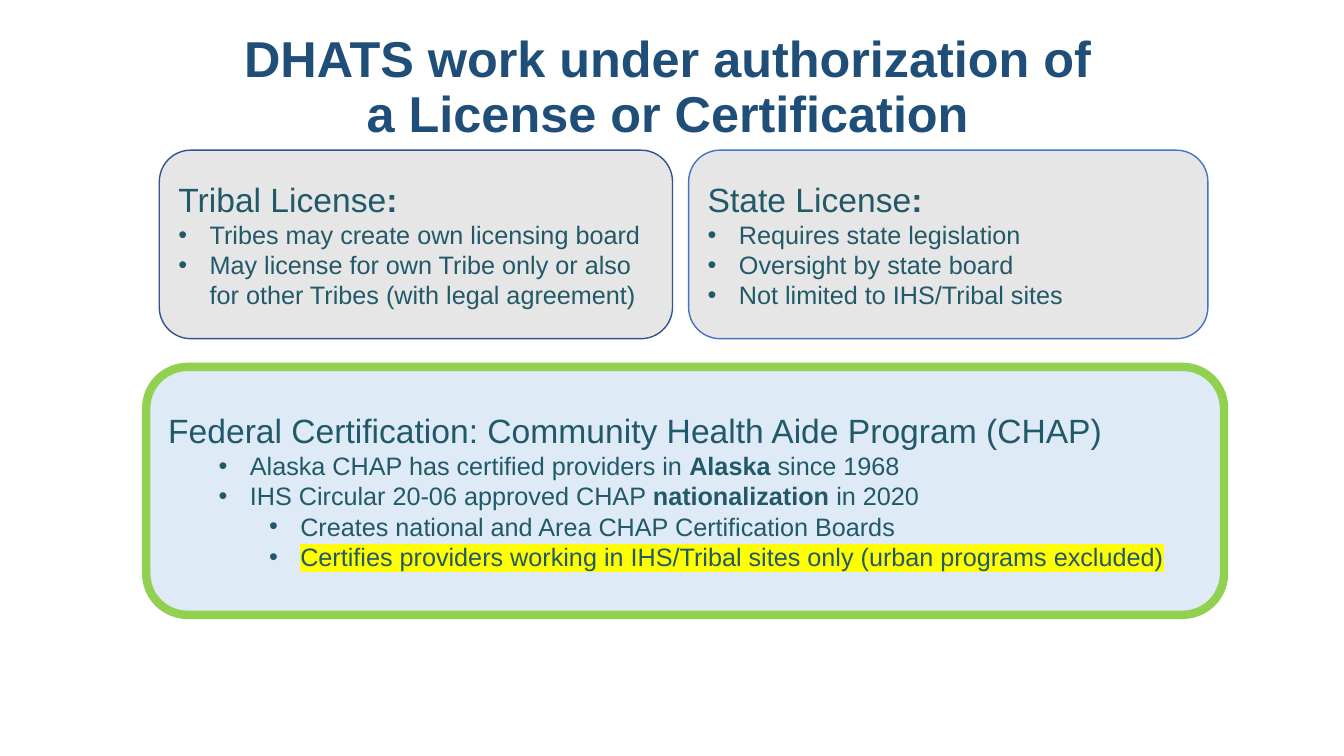
from dataclasses import dataclass

from lxml.etree import SubElement
from pptx import Presentation
from pptx.dml.color import RGBColor
from pptx.enum.shapes import MSO_SHAPE
from pptx.enum.text import MSO_ANCHOR, PP_ALIGN
from pptx.oxml.ns import qn
from pptx.util import Inches, Pt


@dataclass(frozen=True)
class Theme:
    font: str = "Arial"
    title: str = "1F4E79"
    body: str = "215968"
    license_fill: str = "E7E6E6"
    tribal_line: str = "325491"
    state_line: str = "4472C4"
    federal_fill: str = "DEEBF7"
    federal_line: str = "92D050"
    highlight: str = "FFFF00"
    title_size: int = 36
    heading_size: int = 24
    bullet_size: int = 18


THEME = Theme()
BULLET_INDENT = 0.31
LEVEL_STEP = 0.5


def style_run(run, size, color, bold=False):
    run.font.name = THEME.font
    run.font.size = Pt(size)
    run.font.bold = bold
    run.font.color.rgb = RGBColor.from_string(color)


def add_marked_text(paragraph, text, size):
    """Write text in which *asterisks* enclose the bold words."""
    for index, words in enumerate(text.split("*")):
        if words:
            run = paragraph.add_run()
            run.text = words
            style_run(run, size, THEME.body, bold=index % 2 == 1)


def add_bullet(paragraph, level):
    paragraph.level = level
    properties = paragraph._p.get_or_add_pPr()
    properties.set("marL", str(Inches(BULLET_INDENT + level * LEVEL_STEP)))
    properties.set("indent", str(-Inches(BULLET_INDENT)))
    SubElement(properties, qn("a:buFont"), typeface=THEME.font)
    SubElement(properties, qn("a:buChar"), char="•")


def highlight_run(run):
    properties = run._r.get_or_add_rPr()
    highlight = SubElement(properties, qn("a:highlight"))
    SubElement(highlight, qn("a:srgbClr"), val=THEME.highlight)
    # The schema wants the highlight directly after the text fill
    properties.find(qn("a:solidFill")).addnext(highlight)


def add_title(slide, box, text):
    title = slide.shapes.add_textbox(*map(Inches, box))
    frame = title.text_frame
    frame.word_wrap = True
    frame.vertical_anchor = MSO_ANCHOR.MIDDLE
    paragraph = frame.paragraphs[0]
    paragraph.text = text
    paragraph.alignment = PP_ALIGN.CENTER
    paragraph.line_spacing = 0.9
    for run in paragraph.runs:
        style_run(run, THEME.title_size, THEME.title, bold=True)


def add_panel(slide, box, heading, bullets, fill, line, line_width):
    """Rounded panel with a heading and (level, text) bullets."""
    panel = slide.shapes.add_shape(MSO_SHAPE.ROUNDED_RECTANGLE, *map(Inches, box))
    panel.shadow.inherit = False
    panel.fill.solid()
    panel.fill.fore_color.rgb = RGBColor.from_string(fill)
    panel.line.color.rgb = RGBColor.from_string(line)
    panel.line.width = Pt(line_width)

    frame = panel.text_frame
    frame.word_wrap = True
    frame.vertical_anchor = MSO_ANCHOR.MIDDLE
    add_marked_text(frame.paragraphs[0], heading, THEME.heading_size)
    for level, text in bullets:
        paragraph = frame.add_paragraph()
        add_bullet(paragraph, level)
        add_marked_text(paragraph, text, THEME.bullet_size)
    for paragraph in frame.paragraphs:
        paragraph.alignment = PP_ALIGN.LEFT
    return panel


def main():
    presentation = Presentation()
    presentation.slide_width = Inches(13.33)
    presentation.slide_height = Inches(7.5)
    slide = presentation.slides.add_slide(presentation.slide_layouts[6])

    add_title(slide, (1.11, 0.42, 11.03, 0.92),
              "DHATS work under authorization of\va License or Certification")

    # Licenses, side by side
    add_panel(slide, (6.83, 1.49, 5.15, 1.87), "State License*:*", [
        (0, "Requires state legislation"),
        (0, "Oversight by state board"),
        (0, "Not limited to IHS/Tribal sites"),
    ], THEME.license_fill, THEME.state_line, 1)
    add_panel(slide, (1.58, 1.49, 5.09, 1.87), "Tribal License*:*", [
        (0, "Tribes may create own licensing board"),
        (0, "May license for own Tribe only or also for other Tribes "
            "(with legal agreement)"),
    ], THEME.license_fill, THEME.tribal_line, 1)

    # Federal certification, emphasised below
    federal = add_panel(
        slide, (1.45, 3.64, 10.69, 2.46),
        "Federal Certification: Community Health Aide Program (CHAP)", [
            (1, "Alaska CHAP has certified providers in *Alaska* since 1968"),
            (1, "IHS Circular 20-06 approved CHAP *nationalization* in 2020"),
            (2, "Creates national and Area CHAP Certification Boards"),
            (2, "Certifies providers working in IHS/Tribal sites only "
                "(urban programs excluded)"),
        ], THEME.federal_fill, THEME.federal_line, 6)
    highlight_run(federal.text_frame.paragraphs[-1].runs[0])

    presentation.save("out.pptx")


if __name__ == "__main__":
    main()
